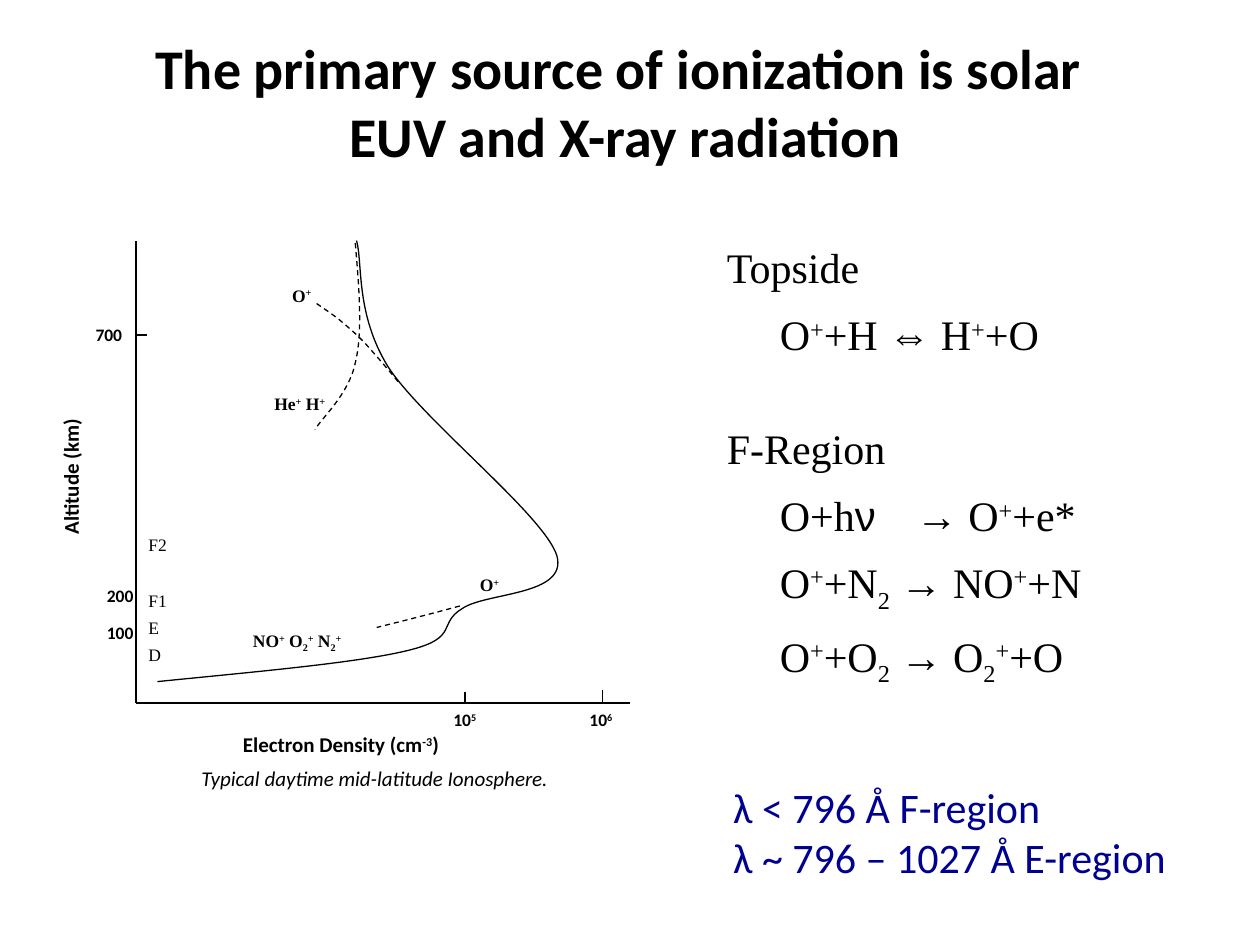
from lxml import etree
from pptx import Presentation
from pptx.dml.color import RGBColor
from pptx.enum.dml import MSO_LINE
from pptx.enum.shapes import MSO_CONNECTOR
from pptx.enum.text import PP_ALIGN
from pptx.oxml.ns import qn
from pptx.util import Inches, Pt

STRAIGHT = MSO_CONNECTOR.STRAIGHT
DASH = MSO_LINE.DASH
CENTER = PP_ALIGN.CENTER
SANS, SERIF, GREEK = "Calibri", "Times New Roman", "Arial"
BLACK, NAVY = "000000", "000090"
BASELINES = {"^": "30000", "_": "-25000"}

DENSITY = [(0.17, 3.5), (0.97, 3.42), (1.77, 3.35), (2.17, 3.25),
           (2.57, 3.15), (2.39, 3.04), (2.59, 2.92),
           (2.78, 2.79), (3.43, 2.82), (3.34, 2.5),
           (3.24, 2.18), (2.27, 1.42), (2, 1),
           (1.74, 0.58), (1.8, 0.17), (1.75, 0)]
TOPSIDE_OXYGEN = [(2.08, 1.12), (2, 1.02), (1.92, 0.93), (1.85, 0.85),
                  (1.78, 0.77), (1.71, 0.71), (1.64, 0.65),
                  (1.57, 0.59), (1.49, 0.54), (1.42, 0.49)]
LIGHT_IONS = [(1.74, 0.02), (1.77, 0.37), (1.8, 0.73), (1.74, 0.97),
              (1.69, 1.22), (1.47, 1.41), (1.42, 1.5)]
MOLECULAR_IONS = [(2.57, 2.9), (2.57, 2.9), (2.24, 2.99), (1.91, 3.07)]

AXES = [(0, 3.67, 0, 0), (0, 3.67, 3.92, 3.67)]
TICKS = [(0, 0.75, 0.09, 0.75), (2.61, 3.58, 2.61, 3.67), (3.7, 3.57, 3.7, 3.66)]
SCALE_LABELS = [("700", -0.42, 0.61), ("200", -0.33, 2.68), ("100", -0.33, 2.98),
                ("10|^5", 2.42, 3.67), ("10|^6", 3.5, 3.67)]
ION_LABELS = [("O|^+", 1.14, 0.3, 0.5), ("He|^+| H|^+", 1, 1.16, 0.83),
              ("O|^+", 2.63, 2.6, 0.5),
              ("NO|^+| O|_2|^+| N|_2|^+", 0.83, 3.04, 1)]
LAYER_LABELS = [("F2", 2.28), ("F1", 2.72), ("E", 2.94), ("D", 3.15)]
REACTIONS = ["Topside", "\tO|^+|+H ⇔ H|^+|+O", "F-Region",
             "\tO+h|ν|\t→ O|^+|+e*", "\tO|^+|+N|_2| → NO|^+|+N",
             "\tO|^+|+O|_2| → O|_2|^+|+O"]


def rgb(color):
    """Turn a hex string into a colour."""
    return RGBColor.from_string(color)


def add_spans(para, markup):
    """Add runs split at bars, with ^ raising and _ lowering a run."""
    for chunk in markup.split("|"):
        span = para.add_run()
        span.text = chunk.lstrip("^_")
        if chunk[0] in BASELINES:
            span._r.get_or_add_rPr().set("baseline", BASELINES[chunk[0]])
        if chunk == "ν":
            span.font.name = GREEK


def add_text(page, box, lines, size, name=SANS, color=BLACK, bold=False,
             italic=False, align=None, wrap=True):
    """Add a text box with one paragraph for each line."""
    shape = page.shapes.add_textbox(*(Inches(value) for value in box))
    frame = shape.text_frame
    frame.word_wrap = wrap
    for index, markup in enumerate(lines):
        para = frame.add_paragraph() if index else frame.paragraphs[0]
        para.alignment = align
        font = para.font
        font.name, font.size, font.bold, font.italic = name, Pt(size), bold, italic
        font.color.rgb = rgb(color)
        add_spans(para, markup)
    return shape


def add_line(page, left, top, ends):
    """Draw a thin straight line between two points of a region."""
    x1, y1, x2, y2 = ends
    line = page.shapes.add_connector(STRAIGHT, Inches(left + x1), Inches(top + y1),
                                     Inches(left + x2), Inches(top + y2))
    line.line.color.rgb = rgb(BLACK)
    line.line.width = Pt(0.75)
    etree.SubElement(line._element.spPr, qn("a:effectLst"))


def add_curve(page, left, top, knots, dash=None):
    """Draw an open chain of cubic curves through the knots of a region."""
    points = [(Inches(left + x), Inches(top + y)) for x, y in knots]
    builder = page.shapes.build_freeform(*points[0])
    builder.add_line_segments(points[1:], close=False)
    curve = builder.convert_to_shape()
    outline = next(curve._element.iter(qn("a:path")))
    segments = outline.findall(qn("a:lnTo"))
    for start in range(0, len(segments), 3):
        cubic = etree.SubElement(outline, qn("a:cubicBezTo"))
        for segment in segments[start:start + 3]:
            cubic.append(segment[0])
            outline.remove(segment)
    curve.shadow.inherit = False
    curve.fill.background()
    curve.line.color.rgb = rgb(BLACK)
    curve.line.width = Pt(0.75)
    if dash:
        curve.line.dash_style = dash


def add_profile(page, left, top):
    """Draw the altitude profile with its axes, curves and labels."""
    for ends in AXES + TICKS:
        add_line(page, left, top, ends)
    add_curve(page, left, top, DENSITY)
    for knots in (TOPSIDE_OXYGEN, LIGHT_IONS, MOLECULAR_IONS):
        add_curve(page, left, top, knots, DASH)
    for text, x, y in SCALE_LABELS:
        add_text(page, (left + x, top + y, 0.75, 0.27), [text], 10, bold=True)
    for text, x, y, width in ION_LABELS:
        add_text(page, (left + x, top + y, width, 0.27), [text], 10, SERIF, bold=True)
    for text, y in LAYER_LABELS:
        add_text(page, (left, top + y, 0.4, 0.27), [text], 10, SERIF)
    altitude = add_text(page, (left - 1.61, top + 1.19, 2.18, 0.3),
                        ["Altitude (km)"], 12, bold=True)
    altitude.rotation = 270
    add_text(page, (left + 0.75, top + 3.85, 3, 0.3),
             ["Electron Density (cm|^-3|)"], 12, bold=True)
    add_text(page, (left + 0.42, top + 4.12, 3, 0.3),
             ["Typical daytime mid-latitude Ionosphere."], 12, italic=True)


def add_reactions(page, left, top):
    """List the reactions, with tab stops for the indent and the arrow."""
    shape = add_text(page, (left, top, 3.11, 3.74), REACTIONS, 24, SERIF)
    for markup, para in zip(REACTIONS, shape.text_frame.paragraphs):
        para.space_after = Pt(9.4)
        if markup == "F-Region":
            para.space_before = Pt(27)
        if markup.startswith("\t"):
            stops = etree.Element(qn("a:tabLst"))
            for position in (0.42, 1.5):
                etree.SubElement(stops, qn("a:tab"), pos=str(Inches(position)), algn="l")
            para._p.pPr.find(qn("a:defRPr")).addprevious(stops)


def add_wavelengths(page, left, top):
    """State the wavelength range of each region on two lines."""
    shape = add_text(page, (left, top, 3.69, 0.91), ["λ < 796 Å F-region"],
                     24, color=NAVY, wrap=False)
    para = shape.text_frame.paragraphs[0]
    para.add_line_break()
    add_spans(para, "λ ~ 796 – 1027 Å E-region")


def main():
    """Build the slide and save it."""
    deck = Presentation()
    deck.slide_width, deck.slide_height = Inches(10), Inches(7.5)
    page = deck.slides.add_slide(deck.slide_layouts[6])
    add_text(page, (0.42, 0.22, 9.08, 1.18),
             ["The primary source of ionization is solar ", "EUV and X-ray radiation"],
             32, bold=True, align=CENTER)
    add_profile(page, 1.08, 1.91)
    add_reactions(page, 5.67, 1.87)
    add_wavelengths(page, 5.72, 6.15)
    deck.save("out.pptx")


if __name__ == "__main__":
    main()
